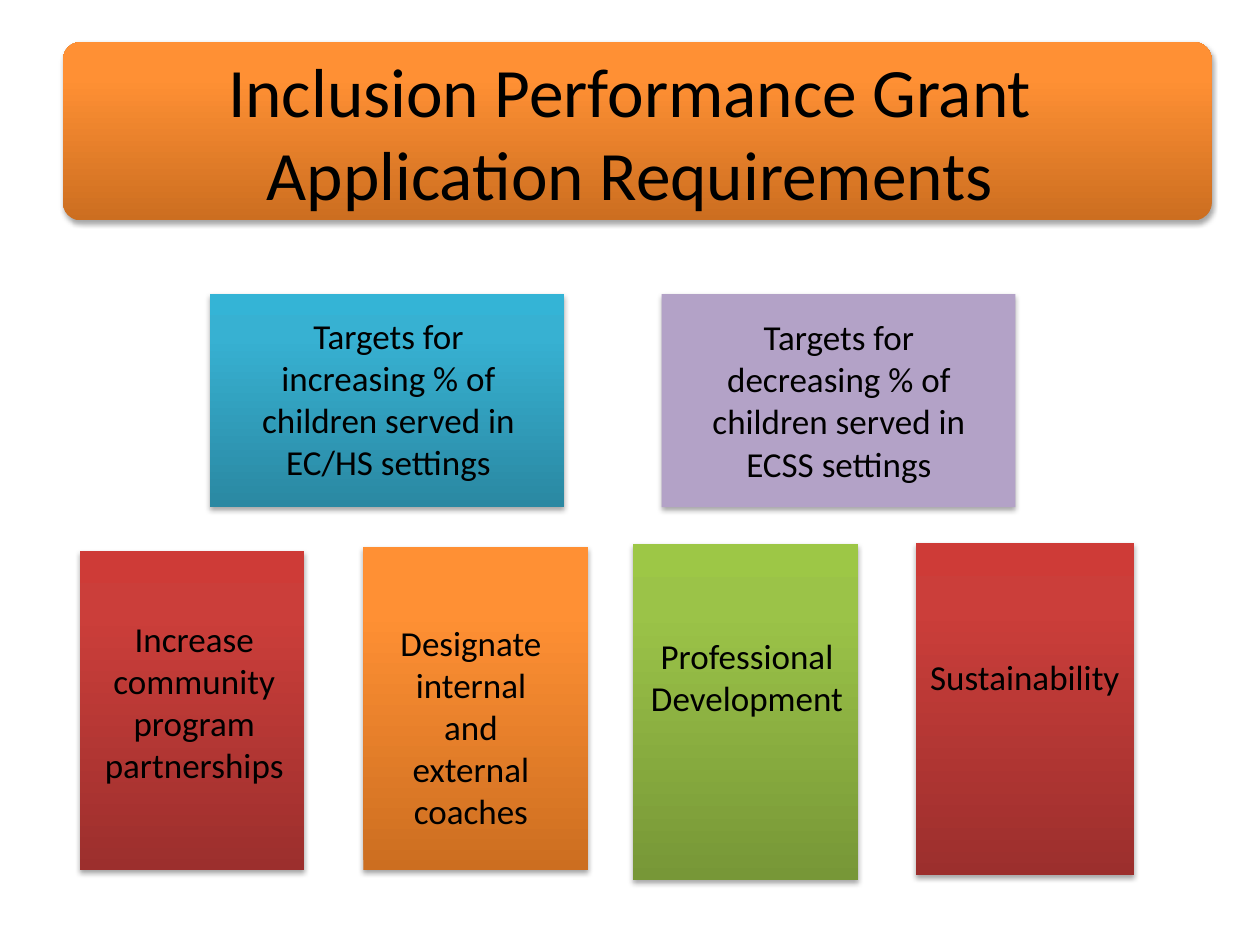
from copy import deepcopy
from typing import NamedTuple

from lxml.etree import SubElement
from pptx import Presentation
from pptx.dml.color import RGBColor
from pptx.enum.shapes import MSO_SHAPE as Kind
from pptx.enum.text import MSO_ANCHOR as Anchor, MSO_AUTO_SIZE as Auto, PP_ALIGN as Align
from pptx.oxml.ns import qn
from pptx.util import Inches, Pt

# Grid of 120 columns by 90 rows on a 10 x 7.5 inch slide
COLS, ROWS = 120, 90
WIDE, HIGH = Inches(10), Inches(7.5)

BLACK = RGBColor(0x00, 0x00, 0x00)
LILAC = (RGBColor(0xB3, 0xA2, 0xC7),)
# Gradients run from the bottom edge to the top edge
ORANGE = (RGBColor(0xCC, 0x6E, 0x20), RGBColor(0xFF, 0x90, 0x34), RGBColor(0xFF, 0x91, 0x36))
BLUE = (RGBColor(0x2A, 0x88, 0xA2), RGBColor(0x37, 0xB1, 0xD2), RGBColor(0x34, 0xB4, 0xD6))
RED = (RGBColor(0x9C, 0x2F, 0x2D), RGBColor(0xCB, 0x3E, 0x3A), RGBColor(0xCE, 0x3B, 0x37))
GREEN = (RGBColor(0x77, 0x97, 0x37), RGBColor(0x9B, 0xC3, 0x48), RGBColor(0x9D, 0xC7, 0x46))
STOPS = (0, 0.8, 1)


class Area(NamedTuple):
    col: float
    row: float
    cols: float
    rows: float

    def place(self) -> tuple[int, int, int, int]:
        return (round(self.col * WIDE / COLS), round(self.row * HIGH / ROWS),
                round(self.cols * WIDE / COLS), round(self.rows * HIGH / ROWS))


class Card(NamedTuple):
    box: Area
    label: Area
    tint: tuple[RGBColor, ...]
    text: str


CARDS = [
    # Targets
    Card(Area(20, 28, 33.7, 20.3), Area(22, 29.4, 30, 17.4), BLUE,
         "Targets for increasing % of children served in EC/HS settings"),
    Card(Area(63, 28, 33.7, 20.3), Area(64.9, 29.5, 30, 17.4), LILAC,
         "Targets for decreasing % of children served in ECSS settings"),
    # Means
    Card(Area(7.6, 52.5, 21.4, 30.4), Area(8, 58.2, 21, 17.4), RED,
         "Increase community program partnerships"),
    Card(Area(34.6, 52.1, 21.4, 30.8), Area(35.9, 58.6, 17.9, 21.4), ORANGE,
         "Designate internal and external coaches"),
    Card(Area(60.3, 51.8, 21.4, 32), Area(60.7, 59.8, 20.9, 9.2), GREEN,
         "Professional Development"),
    Card(Area(87.2, 51.7, 20.8, 31.6), Area(87.2, 61.8, 20.8, 5.3), RED,
         "Sustainability"),
]


def shade(shape) -> None:
    """Cast a soft shadow straight down."""
    shape.shadow.inherit = False
    list_ = shape._element.spPr.find(qn("a:effectLst"))
    drop = SubElement(list_, qn("a:outerShdw"), blurRad=str(Pt(3.1)), dist=str(Pt(1.8)),
                      dir="5400000", rotWithShape="0")
    tone = SubElement(drop, qn("a:srgbClr"), val=str(BLACK))
    SubElement(tone, qn("a:alpha"), val="35000")


def paint(shape, tint: tuple[RGBColor, ...]) -> None:
    """Fill with one colour, or with a gradient of three."""
    fill = shape.fill
    if len(tint) == 1:
        fill.solid()
        fill.fore_color.rgb = tint[0]
        return
    fill.gradient()
    fill.gradient_angle = 90
    stops = shape._element.spPr.find(qn("a:gradFill")).find(qn("a:gsLst"))
    stops.append(deepcopy(stops[-1]))
    for stop, spot, color in zip(fill.gradient_stops, STOPS, tint):
        stop.position = spot
        stop.color.rgb = color


def add_box(slide, area: Area, tint: tuple[RGBColor, ...], kind=Kind.RECTANGLE):
    box = slide.shapes.add_shape(kind, *area.place())
    paint(box, tint)
    box.line.fill.background()
    shade(box)
    return box


def add_text(slide, area: Area, *lines: str, size: float = 20,
             anchor=Anchor.TOP, auto=Auto.SHAPE_TO_FIT_TEXT) -> None:
    frame = slide.shapes.add_textbox(*area.place()).text_frame
    frame.word_wrap = True
    frame.auto_size = auto
    frame.vertical_anchor = anchor
    para = frame.paragraphs[0]
    para.alignment = Align.CENTER
    for i, line in enumerate(lines):
        if i:
            para.add_line_break()
        run = para.add_run()
        run.text = line
        run.font.name = "Calibri"
        run.font.size = Pt(size)
        run.font.color.rgb = BLACK


def main() -> None:
    deck = Presentation()
    deck.slide_width, deck.slide_height = WIDE, HIGH
    slide = deck.slides.add_slide(deck.slide_layouts[6])

    # Title banner
    banner = add_box(slide, Area(6, 4, 109.4, 17), ORANGE, Kind.ROUNDED_RECTANGLE)
    banner.adjustments[0] = 0.1
    add_text(slide, Area(6, 5, 108, 15), "Inclusion Performance Grant",
             "Application Requirements", size=39.6, anchor=Anchor.MIDDLE, auto=Auto.NONE)

    # Requirement cards
    for card in CARDS:
        add_box(slide, card.box, card.tint)
        add_text(slide, card.label, card.text)

    deck.save("out.pptx")


if __name__ == "__main__":
    main()
